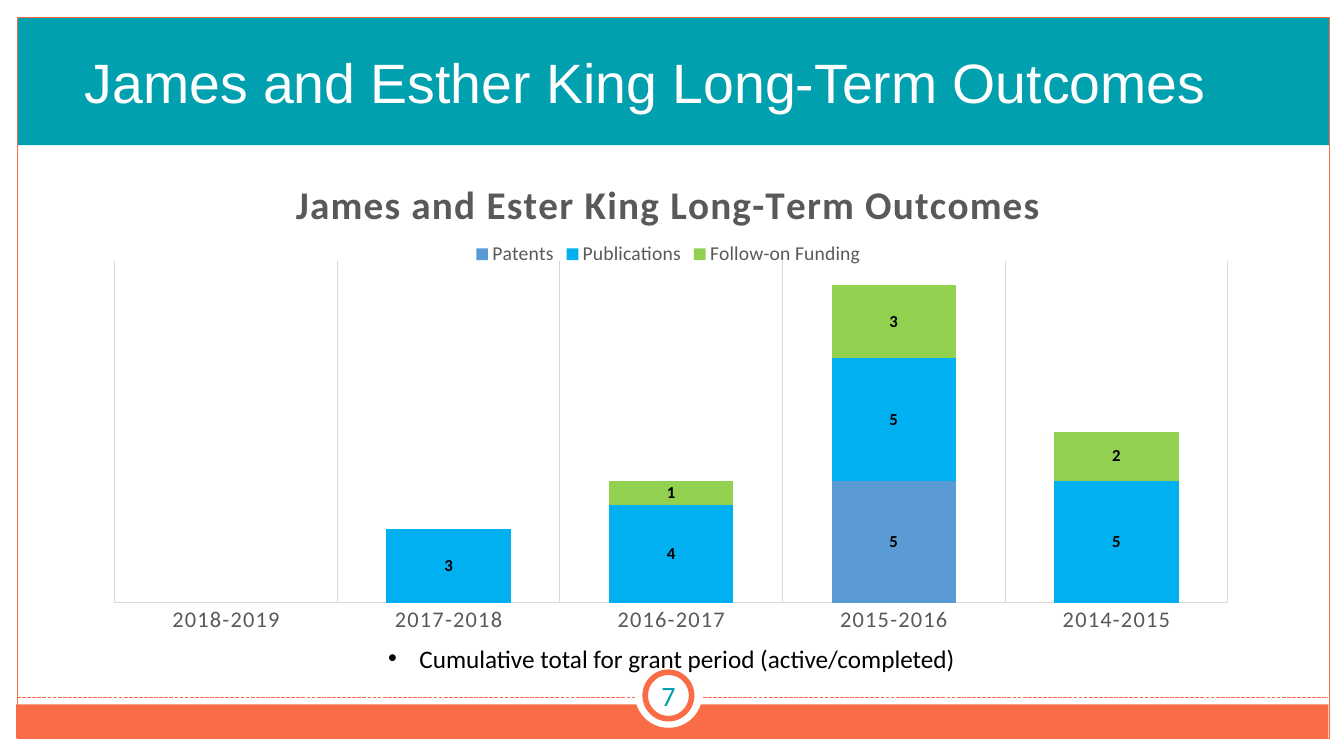
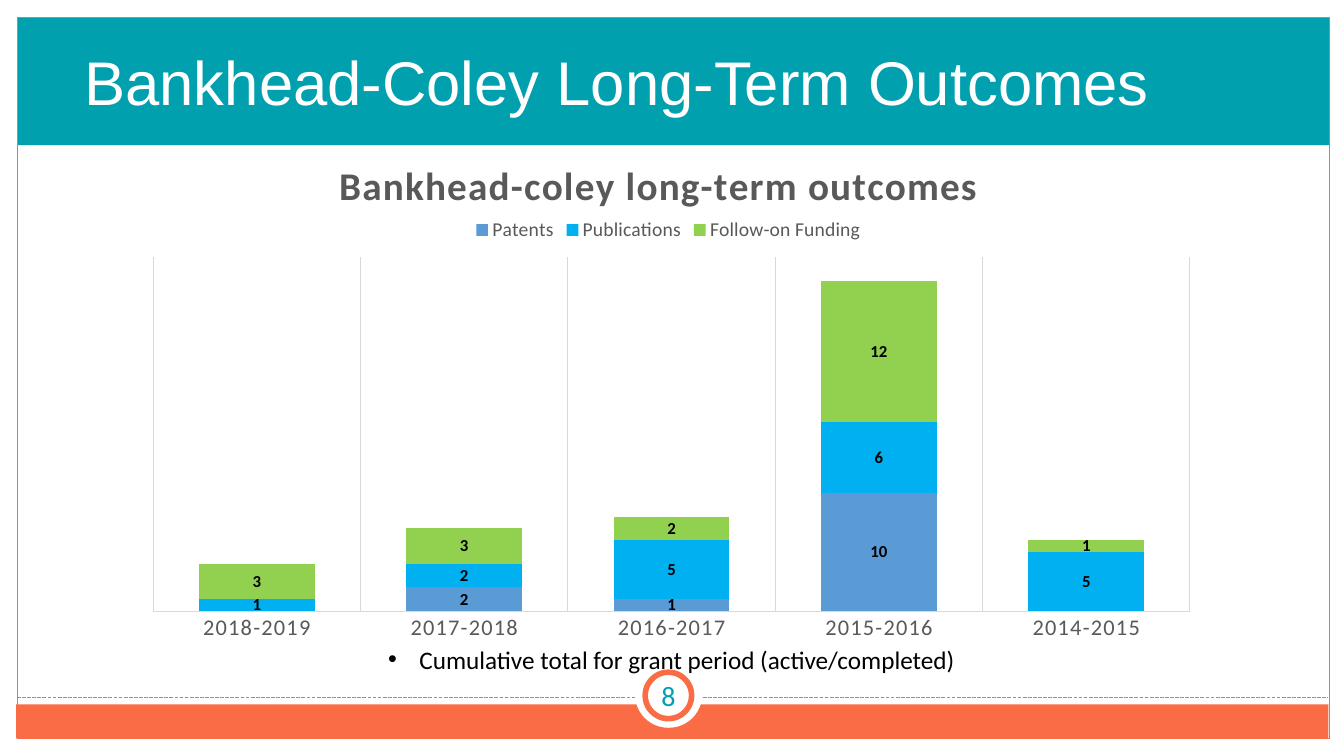
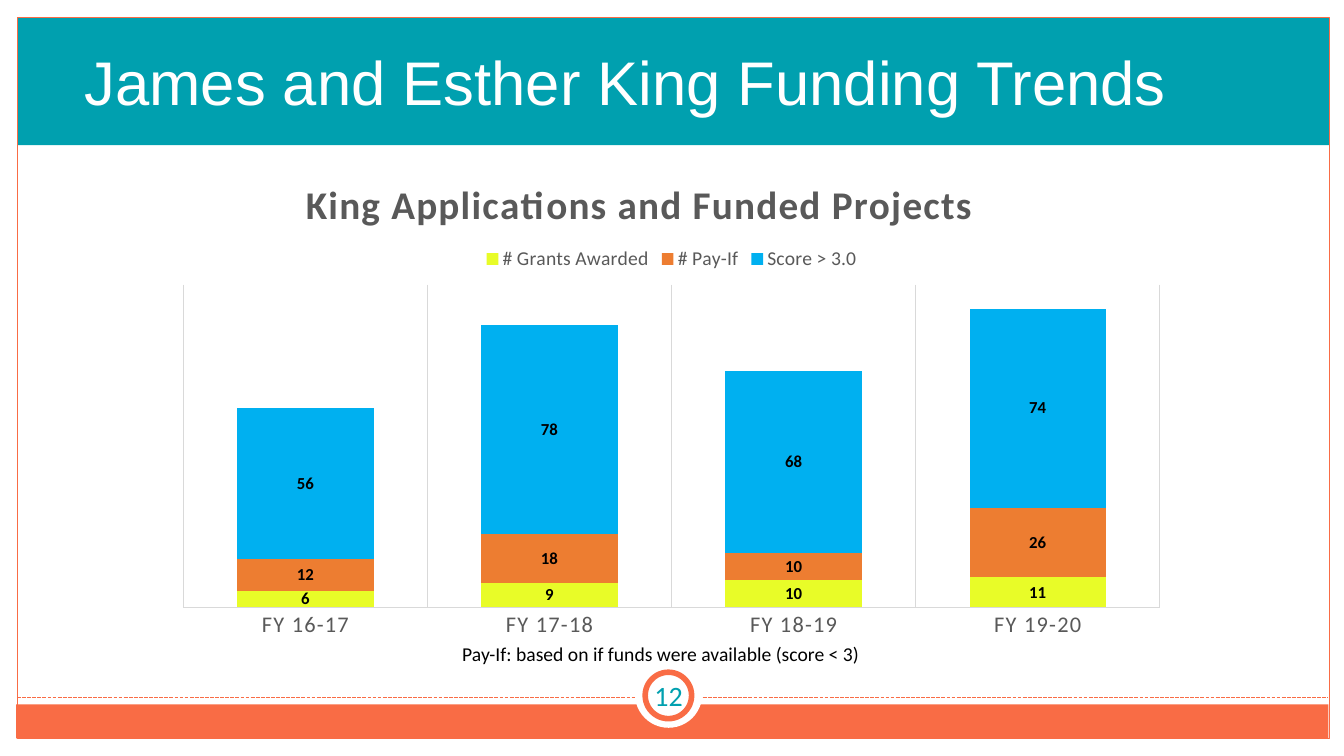
import lxml.etree
import pptx
import pptx.chart.data
import pptx.dml.color
import pptx.enum.chart
import pptx.enum.dml
import pptx.enum.shapes
import pptx.enum.text
import pptx.oxml.ns
import pptx.util

Cm = pptx.util.Cm
Pt = pptx.util.Pt
RGB = pptx.dml.color.RGBColor.from_string
qn = pptx.oxml.ns.qn
RECT = pptx.enum.shapes.MSO_SHAPE.RECTANGLE
OVAL = pptx.enum.shapes.MSO_SHAPE.OVAL
ALIGN = pptx.enum.text.PP_ALIGN
MIDDLE = pptx.enum.text.MSO_ANCHOR.MIDDLE


class Theme:
    teal, orange, white, black = "00A0AF", "F96C45", "FFFFFF", "000000"
    grey, rule = "595959", "D9D9D9"
    blue, sky, green = "5B9BD5", "00B0F0", "92D050"
    yellow, rust = "E8FC28", "ED7D31"
    heading, body = "Arial", "Calibri"
    number, chart_title, category, legend, label = 20, 28, 16, 14, 12
    spacing = "100"


def style_font(font, size, color, name=Theme.body, bold=False):
    font.size = Pt(size)
    font.name = name
    font.bold = bold
    font.color.rgb = RGB(color)


def place(parent, chart_box, box):
    for old in parent.findall(qn("c:layout")):
        parent.remove(old)
    overlay = parent.find(qn("c:overlay"))
    layout = lxml.etree.Element(qn("c:layout"))
    parent.insert(0 if overlay is None else parent.index(overlay), layout)
    manual = lxml.etree.SubElement(layout, qn("c:manualLayout"))
    settings = [("xMode", "edge"), ("yMode", "edge")]
    if len(box) == 4:
        settings.insert(0, ("layoutTarget", "inner"))
    left, top, width, height = chart_box
    settings += [("x", (box[0] - left) / width), ("y", (box[1] - top) / height)]
    if len(box) == 4:
        settings += [("w", box[2] / width), ("h", box[3] / height)]
    for tag, value in settings:
        lxml.etree.SubElement(manual, qn("c:" + tag)).set("val", str(value))


FRAME = [
    (RECT, (0.43, 0.46, 33.07, 3.2), Theme.teal, None),
    (RECT, (0.41, 17.75, 33.07, 0.86), Theme.orange, None),
    (RECT, (0.43, 0.43, 33.07, 18.19), None, 0.75),
    (OVAL, (16, 16.64, 1.7, 1.7), Theme.white, None),
    (OVAL, (16.26, 16.94, 1.17, 1.17), Theme.white, 4),
]
YEARS = ["2018-2019", "2017-2018", "2016-2017", "2015-2016", "2014-2015"]
CUMULATIVE = "Cumulative total for grant period (active/completed)"

SLIDES = [
    dict(
        number="7", title="James and Esther King Long-Term Outcomes", size=39.6,
        heading="James and Ester King Long-Term Outcomes",
        chart=(2.51, 3.63, 28.83, 12.83), heading_at=(7.28, 4.31),
        legend_at=(11.84, 6), plot=(2.89, 6.57, 28.05, 8.62),
        top=14, cats=YEARS,
        series=[("Patents", Theme.blue, [None, None, None, 5, None]),
                ("Publications", Theme.sky, [None, 3, 4, 5, 5]),
                ("Follow-on Funding", Theme.green, [None, None, 1, 3, 2])],
        note=CUMULATIVE, note_box=(9.53, 16.08, 14.96, 1.02), note_size=18, bullet=True),
    dict(
        number="8", title="Bankhead-Coley Long-Term Outcomes", size=44,
        heading="Bankhead-coley long-term outcomes",
        chart=(3.33, 3.38, 27.23, 13.08), heading_at=(8.37, 3.83),
        legend_at=(11.84, 5.39), plot=(3.86, 6.48, 26.13, 8.92),
        top=30, cats=YEARS,
        series=[("Patents", Theme.blue, [None, 2, 1, 10, None]),
                ("Publications", Theme.sky, [1, 2, 5, 6, 5]),
                ("Follow-on Funding", Theme.green, [3, 3, 2, 12, 1])],
        note=CUMULATIVE, note_box=(9.53, 16.1, 14.96, 1.02), note_size=18, bullet=True),
    dict(
        number="12", title="James and Esther King Funding Trends", size=44,
        heading="King Applications and Funded Projects",
        chart=(4.11, 3.76, 25.63, 12.6), heading_at=(7.53, 4.31),
        legend_at=(12.1, 6.12), plot=(4.62, 7.17, 24.61, 8.13),
        top=120, cats=["FY 16-17", "FY 17-18", "FY 18-19", "FY 19-20"],
        series=[("# Grants Awarded", Theme.yellow, [6, 9, 10, 11]),
                ("# Pay-If", Theme.rust, [12, 18, 10, 26]),
                ("Score > 3.0", Theme.sky, [56, 78, 68, 74])],
        note="Pay-If: based on if funds were available (score < 3)",
        note_box=(11.4, 16.05, 11.05, 0.86), note_size=14, bullet=False),
]

prs = pptx.Presentation()
prs.slide_width = Cm(33.87)
prs.slide_height = Cm(19.05)

for page in SLIDES:
    s = prs.slides.add_slide(prs.slide_layouts[6])

    line = s.shapes.add_connector(
        pptx.enum.shapes.MSO_CONNECTOR.STRAIGHT, Cm(0.43), Cm(17.58), Cm(33.48), Cm(17.58))
    line.line.color.rgb = RGB(Theme.orange)
    line.line.width = Pt(0.9)
    line.line.dash_style = pptx.enum.dml.MSO_LINE.SQUARE_DOT
    lxml.etree.SubElement(line._element.spPr, qn("a:effectLst"))

    for kind, box, fill, weight in FRAME:
        sp = s.shapes.add_shape(kind, *map(Cm, box))
        sp.shadow.inherit = False
        if fill:
            sp.fill.solid()
            sp.fill.fore_color.rgb = RGB(fill)
        else:
            sp.fill.background()
        if weight:
            sp.line.color.rgb = RGB(Theme.orange)
            sp.line.width = Pt(weight)
        else:
            sp.line.fill.background()

    chart_data = pptx.chart.data.CategoryChartData()
    chart_data.categories = page["cats"]
    for name, color, values in page["series"]:
        chart_data.add_series(name, values)
    chart = s.shapes.add_chart(
        pptx.enum.chart.XL_CHART_TYPE.COLUMN_STACKED, *map(Cm, page["chart"]), chart_data).chart
    style_font(chart.font, 10, Theme.black)

    chart.has_title = True
    p = chart.chart_title.text_frame.paragraphs[0]
    r = p.add_run()
    r.text = page["heading"]
    style_font(r.font, Theme.chart_title, Theme.grey, bold=True)
    r._r.get_or_add_rPr().set("spc", Theme.spacing)

    chart.has_legend = True
    chart.legend.position = pptx.enum.chart.XL_LEGEND_POSITION.TOP
    chart.legend.include_in_layout = False
    style_font(chart.legend.font, Theme.legend, Theme.grey)

    plot = chart.plots[0]
    plot.gap_width = 79
    plot.overlap = 100
    plot.vary_by_categories = False
    for series, (name, color, values) in zip(plot.series, page["series"]):
        series.format.fill.solid()
        series.format.fill.fore_color.rgb = RGB(color)
        labels = series.data_labels
        labels.show_value = True
        labels.position = pptx.enum.chart.XL_LABEL_POSITION.CENTER
        style_font(labels.font, Theme.label, Theme.black, bold=True)

    axis = chart.category_axis
    axis.major_tick_mark = pptx.enum.chart.XL_TICK_MARK.NONE
    axis.has_major_gridlines = True
    for rule in (axis.format.line, axis.major_gridlines.format.line):
        rule.color.rgb = RGB(Theme.rule)
        rule.width = Pt(0.75)
    style_font(axis.tick_labels.font, Theme.category, Theme.grey)
    axis._element.find(".//" + qn("a:defRPr")).set("spc", Theme.spacing)
    chart.value_axis.visible = False
    chart.value_axis.has_major_gridlines = False
    chart.value_axis.minimum_scale = 0
    chart.value_axis.maximum_scale = page["top"]

    root = chart._chartSpace.find(qn("c:chart"))
    for tag, key in (("title", "heading_at"), ("legend", "legend_at"), ("plotArea", "plot")):
        place(root.find(qn("c:" + tag)), page["chart"], page[key])
    area = lxml.etree.Element(qn("c:spPr"))
    lxml.etree.SubElement(area, qn("a:noFill"))
    lxml.etree.SubElement(lxml.etree.SubElement(area, qn("a:ln")), qn("a:noFill"))
    root.addnext(area)

    texts = [
        ("title", page["title"], (1.88, 0.66, 30.25, 3), page["size"], Theme.white, Theme.heading),
        ("number", page["number"], (15.77, 16.92, 2.16, 1.22), Theme.number, Theme.teal, Theme.body),
        ("note", page["note"], page["note_box"], page["note_size"], Theme.black, Theme.body),
    ]
    for role, text, box, size, color, font in texts:
        sp = s.shapes.add_textbox(*map(Cm, box))
        tf = sp.text_frame
        tf.word_wrap = True
        p = tf.paragraphs[0]
        r = p.add_run()
        r.text = text
        style_font(r.font, size, color, font)
        if role == "note":
            tf.auto_size = pptx.enum.text.MSO_AUTO_SIZE.SHAPE_TO_FIT_TEXT
        else:
            tf.vertical_anchor = MIDDLE
        if role == "title":
            p.line_spacing = 0.9
        if role == "number":
            p.alignment = ALIGN.CENTER
        if role == "note" and page["bullet"]:
            tf.word_wrap = False
            pPr = p._p.get_or_add_pPr()
            pPr.set("marL", str(Cm(0.79)))
            pPr.set("indent", str(-Cm(0.79)))
            lxml.etree.SubElement(pPr, qn("a:buFont")).set("typeface", "Arial")
            lxml.etree.SubElement(pPr, qn("a:buChar")).set("char", "•")

prs.save("out.pptx")
